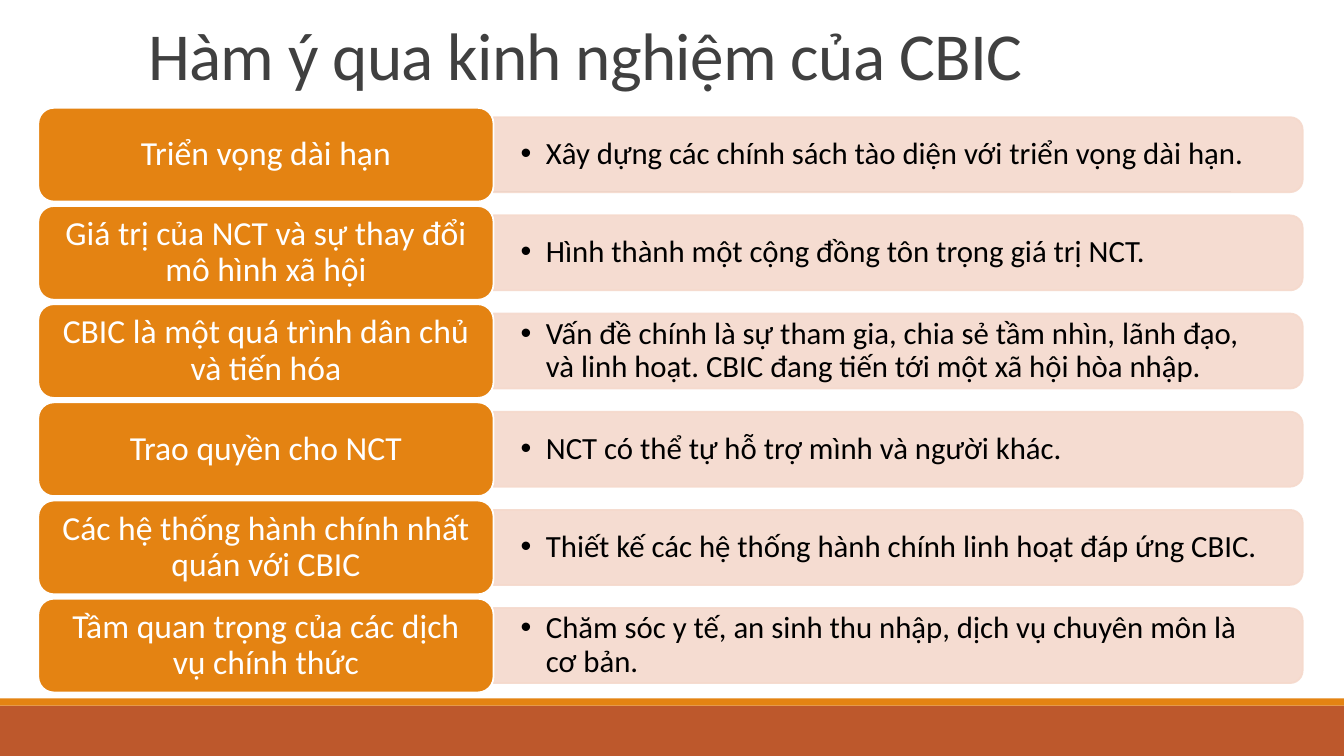
from lxml import etree
from pptx import Presentation
from pptx import util as u
from pptx.dml.color import RGBColor
from pptx.enum import shapes, text
from pptx.oxml.ns import qn

WIDTH, HEIGHT = 13.33, 7.5
ORANGE, RUST, PINK = "E48312", "BD582C", "F5D9CC"
WHITE, BLACK, DARK, GREY = "FFFFFF", "000000", "404040", "808080"

ROW_LEFT, ROW_TOP, ROW_WIDTH = 0.38, 1.07, 12.54
ROW_HEIGHT, ROW_PITCH = 0.93, 0.974
LABEL_SHARE, BAR_SHARE = 0.36, 0.8

TITLE = "Hàm ý qua kinh nghiệm của CBIC"
ROWS = [
    ("Triển vọng dài hạn",
     "Xây dựng các chính sách tào diện với triển vọng dài hạn."),
    ("Giá trị của NCT và sự thay đổi mô hình xã hội",
     "Hình thành một cộng đồng tôn trọng giá trị NCT."),
    ("CBIC là một quá trình dân chủ và tiến hóa",
     "Vấn đề chính là sự tham gia, chia sẻ tầm nhìn, lãnh đạo, và linh hoạt. "
     "CBIC đang tiến tới một xã hội hòa nhập."),
    ("Trao quyền cho NCT",
     "NCT có thể tự hỗ trợ mình và người khác."),
    ("Các hệ thống hành chính nhất quán với CBIC",
     "Thiết kế các hệ thống hành chính linh hoạt đáp ứng CBIC."),
    ("Tầm quan trọng của các dịch vụ chính thức",
     "Chăm sóc y tế, an sinh thu nhập, dịch vụ chuyên môn là cơ bản."),
]


def color(value):
    return RGBColor.from_string(value)


def inches(*lengths):
    return [u.Inches(length) for length in lengths]


def write(shape, words, size, ink, align=text.PP_ALIGN.LEFT,
          anchor=text.MSO_ANCHOR.MIDDLE, insets=(0.1, 0.05), line_spacing=0.9):
    frame = shape.text_frame
    frame.word_wrap = True
    frame.auto_size = text.MSO_AUTO_SIZE.NONE
    frame.vertical_anchor = anchor
    frame.margin_left = frame.margin_right = u.Inches(insets[0])
    frame.margin_top = frame.margin_bottom = u.Inches(insets[1])
    paragraph = frame.paragraphs[0]
    paragraph.alignment = align
    paragraph.line_spacing = line_spacing
    run = paragraph.add_run()
    run.text = words
    run.font.name = "Calibri"
    run.font.size = u.Pt(size)
    run.font.color.rgb = color(ink)
    return paragraph


def add_bullet(paragraph, indent):
    properties = paragraph._p.get_or_add_pPr()
    properties.set("marL", str(u.Inches(indent)))
    properties.set("indent", str(-u.Inches(indent)))
    etree.SubElement(properties, qn("a:buFont")).set("typeface", "Arial")
    etree.SubElement(properties, qn("a:buChar")).set("char", "•")


def set_opacity(fill, percent):
    alpha = etree.SubElement(fill._xPr.find(".//" + qn("a:srgbClr")), qn("a:alpha"))
    alpha.set("val", str(percent * 1000))


def add_block(slide, kind, box, fill, line=None):
    shape = slide.shapes.add_shape(kind, *inches(*box))
    shape.shadow.inherit = False
    shape.fill.solid()
    shape.fill.fore_color.rgb = color(fill)
    if line:
        shape.line.color.rgb = color(line)
        shape.line.width = u.Pt(1.25)
    else:
        shape.line.fill.background()
    return shape


def add_backdrop(slide):
    """Footer bands and the thin rule behind the rows."""
    rectangle = shapes.MSO_SHAPE.RECTANGLE
    add_block(slide, rectangle, (0, 7, WIDTH, 0.5), RUST)
    add_block(slide, rectangle, (0, 6.93, WIDTH, 0.07), ORANGE)
    rule = slide.shapes.add_connector(
        shapes.MSO_CONNECTOR.STRAIGHT, *inches(1.31, 1.9, 12.21, 1.9))
    rule.line.color.rgb = color(GREY)
    rule.line.width = u.Pt(0.5)
    etree.SubElement(rule._element.spPr, qn("a:effectLst"))


def add_title(slide, box):
    title = slide.shapes.title
    title.left, title.top, title.width, title.height = inches(*box)
    paragraph = write(title, TITLE, 48, DARK, anchor=text.MSO_ANCHOR.BOTTOM,
                      line_spacing=0.85)
    paragraph.runs[0].font._element.set("spc", "-50")


def add_row(slide, box, label, detail):
    left, top, width, height = box
    label_width = width * LABEL_SHARE
    bar_left, bar_width = left + label_width, width - label_width
    bar_height = height * BAR_SHARE
    middle = top + height / 2

    # The bar is an upright shape turned a quarter about its centre.
    bar = add_block(slide, shapes.MSO_SHAPE.ROUND_2_SAME_RECTANGLE,
                    (bar_left + (bar_width - bar_height) / 2,
                     middle - bar_width / 2, bar_height, bar_width), PINK, PINK)
    bar.rotation = 90
    set_opacity(bar.fill, 90)
    set_opacity(bar.line.fill, 90)

    detail_box = slide.shapes.add_textbox(
        *inches(bar_left, middle - 0.335, bar_width - 0.04, 0.67))
    add_bullet(write(detail_box, detail, 22, BLACK, insets=(0.27, 0.14)), 0.25)

    label_shape = add_block(slide, shapes.MSO_SHAPE.ROUNDED_RECTANGLE,
                            (left, top, label_width, height), ORANGE, WHITE)
    write(label_shape, label, 24, WHITE, align=text.PP_ALIGN.CENTER)


def main():
    presentation = Presentation()
    presentation.slide_width, presentation.slide_height = inches(WIDTH, HEIGHT)
    slide = presentation.slides.add_slide(presentation.slide_layouts[5])
    add_backdrop(slide)
    add_title(slide, (1.37, 0.23, 11, 0.76))
    for index, (label, detail) in enumerate(ROWS):
        top = ROW_TOP + index * ROW_PITCH
        add_row(slide, (ROW_LEFT, top, ROW_WIDTH, ROW_HEIGHT), label, detail)
    presentation.save("out.pptx")


if __name__ == "__main__":
    main()
